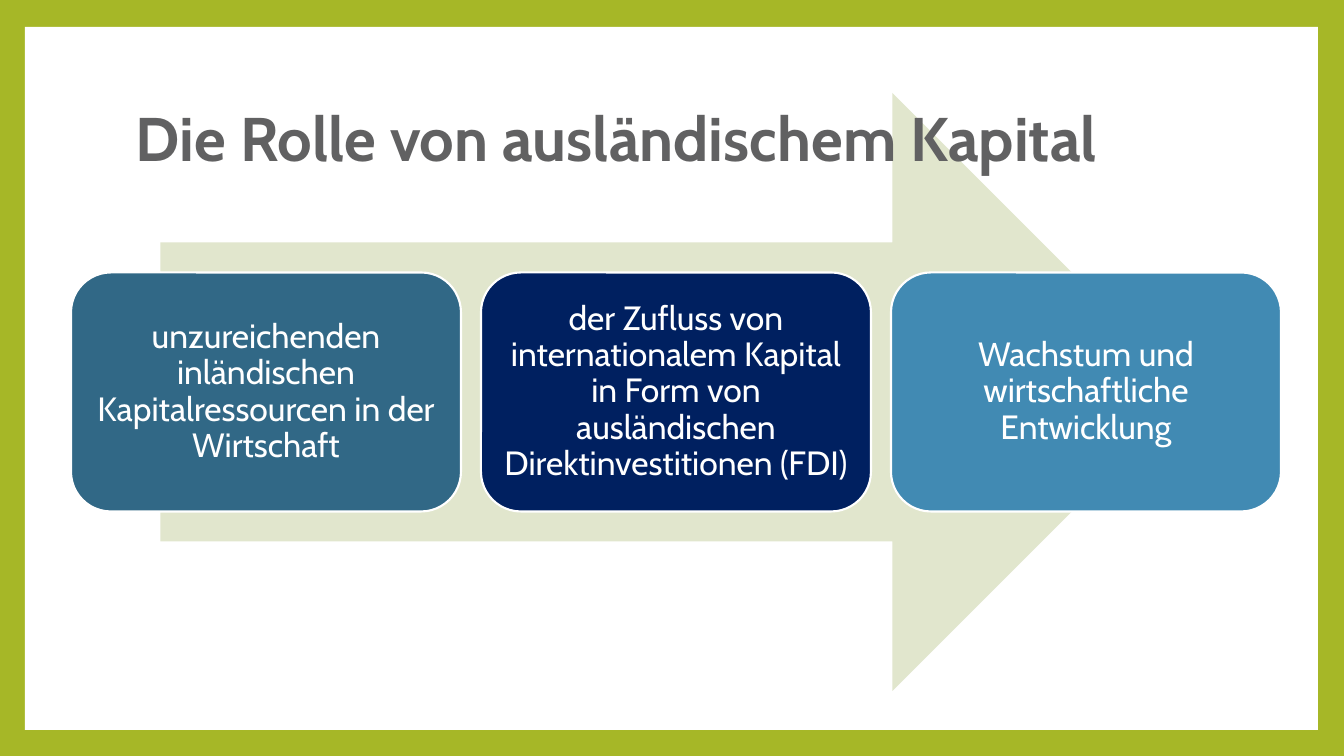
from pptx import Presentation
from pptx.dml.color import RGBColor
from pptx.enum.shapes import MSO_SHAPE as Shape
from pptx.enum.text import MSO_ANCHOR as Anchor, MSO_AUTO_SIZE as AutoSize, PP_ALIGN as Align
from pptx.util import Emu, Pt

SLIDE_WIDTH, SLIDE_HEIGHT = 1344, 756
FONT = "Cabin"
GREEN = RGBColor(0xA6, 0xB7, 0x27)
PALE_GREEN = RGBColor(0xE1, 0xE6, 0xCD)
WHITE = RGBColor(0xFF, 0xFF, 0xFF)
GREY = RGBColor(0x61, 0x61, 0x62)
TEAL = RGBColor(0x31, 0x68, 0x86)
NAVY = RGBColor(0x00, 0x20, 0x60)
BLUE = RGBColor(0x41, 0x8A, 0xB3)

STEPS = [
    ("unzureichenden inländischen Kapitalressourcen in der Wirtschaft", TEAL),
    ("der Zufluss von internationalem Kapital in Form von "
     "ausländischen Direktinvestitionen (FDI)", NAVY),
    ("Wachstum und wirtschaftliche Entwicklung", BLUE),
]


def px(length):
    return Emu(round(length * 914400 / 100.8))


def add_filled(slide, kind, box, color):
    shape = slide.shapes.add_shape(kind, *map(px, box))
    shape.shadow.inherit = False
    shape.fill.solid()
    shape.fill.fore_color.rgb = color
    shape.line.fill.background()
    return shape


def write(shape, text, size, color, align, inset, bold=False):
    frame = shape.text_frame
    frame.text = text
    frame.word_wrap = True
    frame.auto_size = AutoSize.NONE
    frame.vertical_anchor = Anchor.MIDDLE
    frame.margin_left = frame.margin_right = px(inset)
    frame.margin_top = frame.margin_bottom = px(inset)
    paragraph = frame.paragraphs[0]
    paragraph.alignment = align
    paragraph.line_spacing = 0.9
    font = paragraph.runs[0].font
    font.name, font.size, font.bold = FONT, Pt(size), bold
    font.color.rgb = color


def add_frame(slide, box):
    """Green background with a white panel."""
    slide.background.fill.solid()
    slide.background.fill.fore_color.rgb = GREEN
    add_filled(slide, Shape.RECTANGLE, box, WHITE)


def add_process(slide, box, steps, gap=20, card_height=239):
    """Equal cards in a row, centred on a wide arrow."""
    left, top, width, height = box
    arrow_width = 1031
    arrow_left = left + (width - arrow_width) / 2
    add_filled(slide, Shape.RIGHT_ARROW, (arrow_left, top, arrow_width, height), PALE_GREEN)

    card_width = (width - gap * (len(steps) - 1)) / len(steps)
    card_top = top + (height - card_height) / 2
    for index, (text, color) in enumerate(steps):
        card_left = left + index * (card_width + gap)
        card = add_filled(slide, Shape.ROUNDED_RECTANGLE,
                          (card_left, card_top, card_width, card_height), color)
        card.line.color.rgb = WHITE
        card.line.width = Pt(1.5)
        write(card, text, 24, WHITE, Align.CENTER, inset=10)


def place_title(slide, box, text):
    title = slide.shapes.title
    title.left, title.top, title.width, title.height = map(px, box)
    write(title, text, 44, GREY, Align.LEFT, inset=10, bold=True)
    # The title lies in front of the arrow
    title.element.getparent().append(title.element)


def main():
    presentation = Presentation()
    presentation.slide_width = px(SLIDE_WIDTH)
    presentation.slide_height = px(SLIDE_HEIGHT)
    slide = presentation.slides.add_slide(presentation.slide_layouts.get_by_name("Title Only"))
    add_frame(slide, (25, 27, 1293, 703))
    add_process(slide, (71, 93, 1210, 598), STEPS)
    place_title(slide, (126, 67, 1089, 149), "Die Rolle von ausländischem Kapital")
    presentation.save("out.pptx")


if __name__ == "__main__":
    main()
